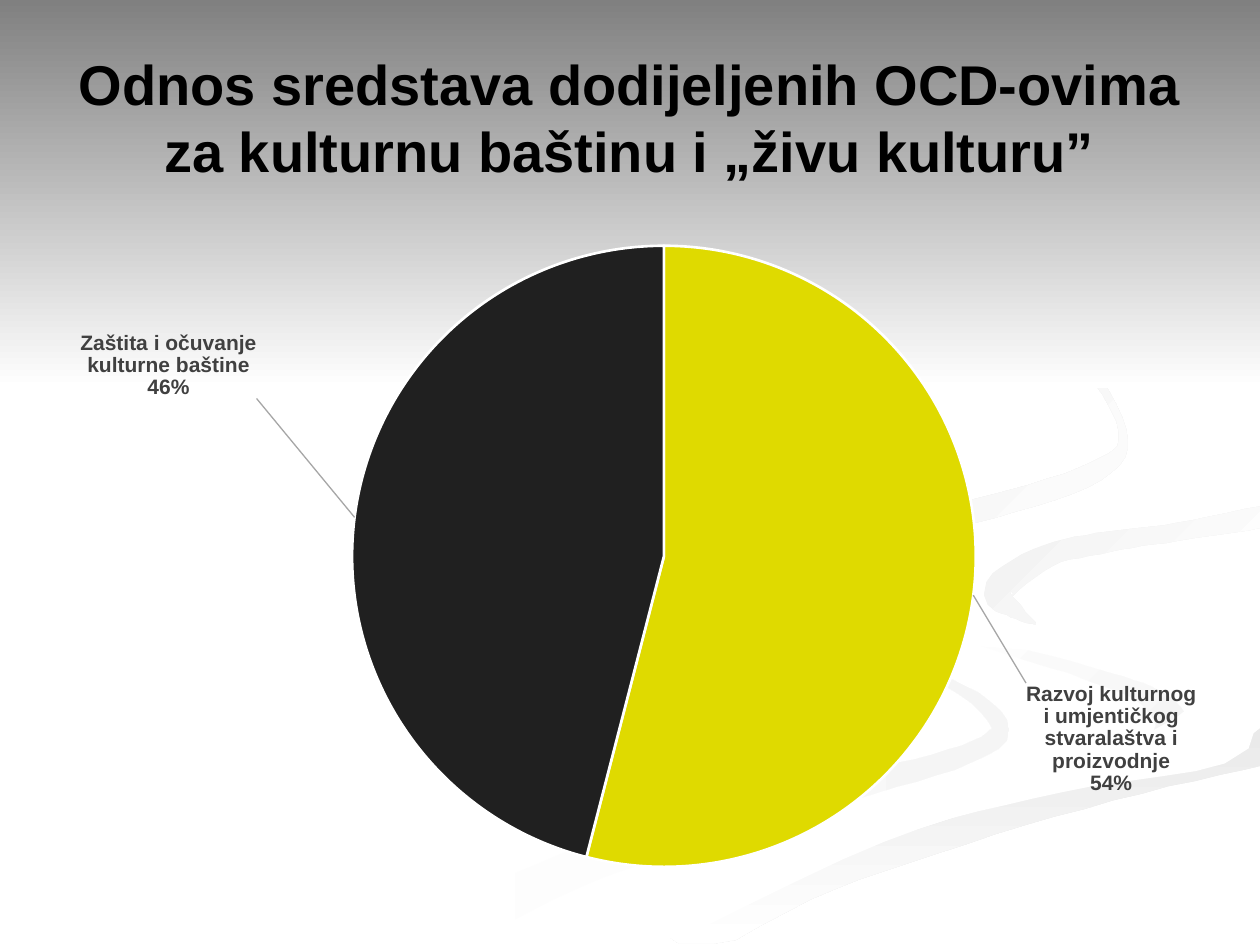
import collections
import copy
import math

import pptx
import pptx.chart.data
import pptx.dml.color
import pptx.enum.chart
import pptx.enum.text
import pptx.oxml
import pptx.oxml.ns
import pptx.util
from pptx.util import Pt

RGBColor = pptx.dml.color.RGBColor
WHITE = RGBColor(0xFF, 0xFF, 0xFF)
BLACK = RGBColor(0x00, 0x00, 0x00)
SKY_GRAY = RGBColor(0x80, 0x80, 0x80)
PALE_GRAY = RGBColor(0xF5, 0xF5, 0xF5)
ROAD_GRAY = RGBColor(0xEA, 0xEA, 0xEA)
BEND_GRAY = RGBColor(0xF1, 0xF1, 0xF1)
CURL_GRAY = RGBColor(0xED, 0xED, 0xED)
LABEL_GRAY = RGBColor(0x40, 0x40, 0x40)
LEADER_GRAY = RGBColor(0xA6, 0xA6, 0xA6)
YELLOW = RGBColor(0xDF, 0xDA, 0x00)
CHARCOAL = RGBColor(0x20, 0x20, 0x20)

GRID = Pt(0.72)
GRID_RIGHT, GRID_BOTTOM, HORIZON = 1000, 749, 308
STEPS_PER_BEND = 6

Bend = collections.namedtuple("Bend", "x y half_width")
Ribbon = collections.namedtuple("Ribbon", "start_color end_color angle bends")

RIBBONS = {
    "left trail": Ribbon(WHITE, PALE_GRAY, 0, [
        Bend(575, 461, 1), Bend(575, 475, 3), Bend(605, 494, 4), Bend(735, 533, 3),
        Bend(793, 574, 7), Bend(766, 599, 8), Bend(678, 624, 10), Bend(570, 653, 13),
        Bend(455, 690, 15), Bend(320, 755, 20)]),
    "right trail": Ribbon(WHITE, PALE_GRAY, 45, [
        Bend(724, 465, 1), Bend(732, 484, 2), Bend(775, 507, 4), Bend(862, 534, 5),
        Bend(910, 552, 8), Bend(930, 575, 13), Bend(916, 593, 8), Bend(896, 605, 1)]),
    "road": Ribbon(ROAD_GRAY, WHITE, 90, [
        Bend(1010, 592, 14), Bend(903, 620, 10), Bend(764, 659, 11),
        Bend(638, 702, 13), Bend(530, 755, 20)]),
    "white road": Ribbon(WHITE, WHITE, 0, [
        Bend(1010, 393, 8), Bend(850, 419, 8), Bend(768, 443, 17), Bend(753, 464, 28),
        Bend(775, 490, 22), Bend(848, 511, 9), Bend(925, 535, 13), Bend(971, 575, 28),
        Bend(840, 623, 6), Bend(700, 662, 6), Bend(490, 755, 13)]),
    "upper bend": Ribbon(BEND_GRAY, WHITE, 45, [
        Bend(822, 495, 1), Bend(806, 485, 6), Bend(793, 468, 12), Bend(832, 441, 9),
        Bend(880, 430, 8), Bend(935, 422, 7), Bend(1010, 409, 9)]),
    "upper curl": Ribbon(CURL_GRAY, WHITE, 45, [
        Bend(765, 234, 1), Bend(850, 279, 3), Bend(891, 342, 3), Bend(870, 374, 8),
        Bend(788, 402, 9), Bend(690, 421, 10), Bend(618, 437, 8), Bend(586, 463, 8),
        Bend(598, 486, 6), Bend(621, 500, 1)]),
}


def spline(before, start, end, after, t):
    return (start + t * (end - before) / 2
            + t ** 2 * (before - 2.5 * start + 2 * end - after / 2)
            + t ** 3 * (1.5 * (start - end) + (after - before) / 2))


def smooth(bends):
    padded = [bends[0], *bends, bends[-1]]
    path = [
        Bend(*(spline(*values, step / STEPS_PER_BEND) for values in zip(*quartet)))
        for quartet in zip(padded, padded[1:], padded[2:], padded[3:])
        for step in range(STEPS_PER_BEND)]
    return path + [bends[-1]]


def ribbon_outline(bends):
    path = smooth(bends)
    left_edge, right_edge = [], []
    for previous, point, following in zip(path[:1] + path, path, path[1:] + path[-1:]):
        dx, dy = following.x - previous.x, following.y - previous.y
        reach = point.half_width / math.hypot(dx, dy)
        for edge, side in ((left_edge, reach), (right_edge, -reach)):
            edge.append((min(point.x + side * dy, GRID_RIGHT),
                         min(point.y - side * dx, GRID_BOTTOM)))
    return left_edge + right_edge[::-1]


class SlideBuilder:
    font_name = "Arial"

    def __init__(self, slide):
        self.slide = slide

    def style(self, font, size, color):
        font.name = self.font_name
        font.size = Pt(size)
        font.bold = True
        font.color.rgb = color

    def backdrop(self, outline, start_color, end_color, angle):
        builder = self.slide.shapes.build_freeform(*outline[0], scale=GRID)
        builder.add_line_segments(outline[1:], close=True)
        area = builder.convert_to_shape()
        area.shadow.inherit = False
        area.line.fill.background()
        if start_color == end_color:
            area.fill.solid()
            area.fill.fore_color.rgb = start_color
            return
        area.fill.gradient()
        area.fill.gradient_angle = (360 - angle) % 360
        for stop, color in zip(area.fill.gradient_stops, (start_color, end_color)):
            stop.color.rgb = color

    def title(self, text, left, top, width, height):
        title = self.slide.shapes.title
        title.left, title.top, title.width, title.height = map(Pt, (left, top, width, height))
        frame = title.text_frame
        frame.text = text
        frame.word_wrap = True
        frame.vertical_anchor = pptx.enum.text.MSO_ANCHOR.MIDDLE
        heading = frame.paragraphs[0]
        heading.alignment = pptx.enum.text.PP_ALIGN.CENTER
        self.style(heading.font, 32, BLACK)
        self.slide.shapes._spTree.append(title._element)

    def element(self, xml):
        tag, rest = xml.split(">", 1)
        return pptx.oxml.parse_xml(f"{tag} {pptx.oxml.ns.nsdecls('c', 'a')}>{rest}")

    def layout(self, **values):
        settings = "".join(f'<c:{key} val="{value}"/>' for key, value in values.items())
        return self.element(f"<c:layout><c:manualLayout>{settings}</c:manualLayout></c:layout>")

    def pie(self, shares, colors, label_offsets, left, top, width, height):
        data = pptx.chart.data.CategoryChartData()
        data.categories = list(shares)
        data.add_series("Series 1", list(shares.values()))
        chart = self.slide.shapes.add_chart(
            pptx.enum.chart.XL_CHART_TYPE.PIE, *map(Pt, (left, top, width, height)), data).chart
        chart.has_title = False
        chart.has_legend = False
        chart.font.name = "Times New Roman"
        chart.font.size = Pt(10)
        chart.plots[0].vary_by_categories = True
        plot_area = chart._chartSpace.chart.plotArea
        for old_layout in plot_area.findall(pptx.oxml.ns.qn("c:layout")):
            plot_area.remove(old_layout)
        plot_area.insert(0, self.layout(layoutTarget="inner", xMode="edge", yMode="edge",
                                        x=0.22, y=0, w=0.62, h=1))
        series = chart.plots[0].series[0]
        for index, color in enumerate(colors):
            slice_format = series.points[index].format
            slice_format.fill.solid()
            slice_format.fill.fore_color.rgb = color
            slice_format.line.color.rgb = WHITE
            slice_format.line.width = Pt(1.5)
        self.pie_labels(series.data_labels, label_offsets)

    def pie_labels(self, labels, offsets):
        labels.show_value = False
        labels.show_category_name = True
        labels.show_percentage = True
        labels.number_format = "0%"
        labels.number_format_is_linked = False
        labels.position = pptx.enum.chart.XL_LABEL_POSITION.OUTSIDE_END
        self.style(labels.font, 12, LABEL_GRAY)
        root = labels._element
        for old_leader in root.findall(pptx.oxml.ns.qn("c:showLeaderLines")):
            root.remove(old_leader)
        root.append(self.element("<c:separator>\n</c:separator>"))
        shared = list(root)
        for index, (x, y) in enumerate(offsets):
            label = self.element(f'<c:dLbl><c:idx val="{index}"/></c:dLbl>')
            label.append(self.layout(x=x, y=y))
            label.extend(copy.deepcopy(shared))
            root.insert(index, label)
        root.append(self.element('<c:showLeaderLines val="1"></c:showLeaderLines>'))
        root.append(self.element(
            '<c:leaderLines><c:spPr><a:ln w="9525"><a:solidFill>'
            f'<a:srgbClr val="{LEADER_GRAY}"/></a:solidFill></a:ln></c:spPr></c:leaderLines>'))


def main():
    deck = pptx.Presentation()
    deck.slide_width, deck.slide_height = Pt(720), Pt(540)
    builder = SlideBuilder(deck.slides.add_slide(deck.slide_layouts[5]))
    for ribbon in RIBBONS.values():
        builder.backdrop(ribbon_outline(ribbon.bends),
                         ribbon.start_color, ribbon.end_color, ribbon.angle)
    sky = [(0, 0), (0, HORIZON), (GRID_RIGHT, HORIZON), (GRID_RIGHT, 0)]
    builder.backdrop(sky, SKY_GRAY, WHITE, 90)
    builder.title("Odnos sredstava dodijeljenih OCD-ovima za kulturnu baštinu i „živu kulturu”",
                  36, 21.6, 648, 90)
    shares = {"Razvoj kulturnog i umjentičkog stvaralaštva i proizvodnje": 54,
              "Zaštita i očuvanje kulturne baštine": 46}
    builder.pie(shares, (YELLOW, CHARCOAL), ((0.04, 0.14), (-0.08, -0.19)),
                36, 139.7, 648, 356.4)
    deck.save("out.pptx")


if __name__ == "__main__":
    main()
